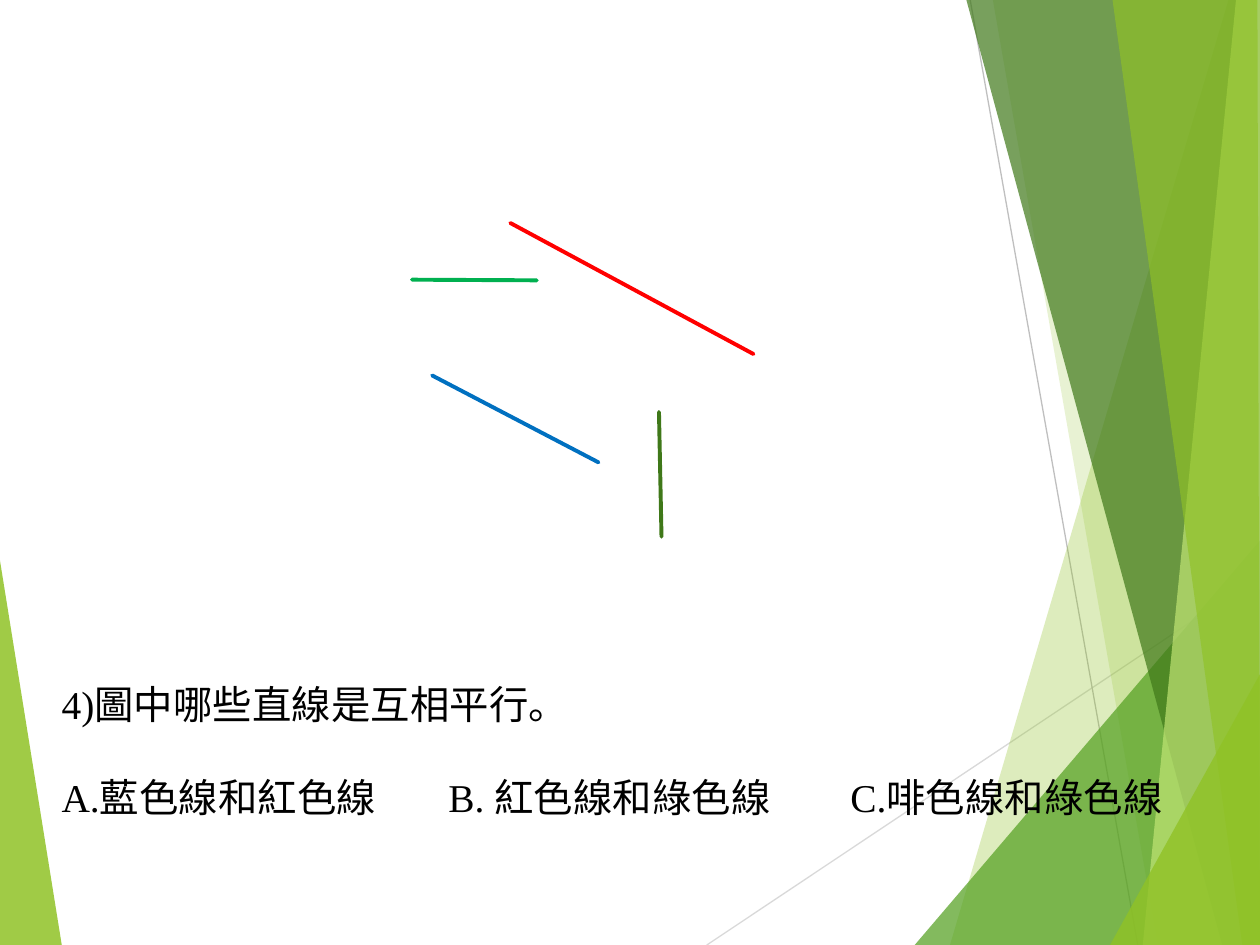
from lxml import etree
from pptx import Presentation
from pptx.dml.color import RGBColor
from pptx.enum.shapes import MSO_CONNECTOR
from pptx.oxml.ns import qn
from pptx.util import Inches, Pt

STRAIGHT = MSO_CONNECTOR.STRAIGHT
COLS, ROWS = 100, 75
CELL = Inches(0.1)
FONT = "Times New Roman"
COLORS = {
    "lime": "90C226", "green": "54A021", "forest": "3F7819", "pale": "C0E474",
    "light gray": "D9D9D9", "gray": "BFBFBF", "black": "000000",
    "red": "FF0000", "blue": "0070C0", "emerald": "00B050",
}

# Points are (column, row); each facet is colour, opacity in percent, corners.
LEFT_FACET = ("lime", 85, [(0, 44.5), (4.9, ROWS), (0, ROWS)])
RIGHT_FACETS = [
    ("lime", 30, [(97.5, 0), (75.4, ROWS), (COLS, ROWS), (COLS, 0)]),
    ("lime", 20, [(78.8, 0), (91.9, ROWS), (COLS, ROWS), (COLS, 0)]),
    ("green", 72, [(72.6, ROWS), (COLS, 42.9), (COLS, ROWS)]),
    ("forest", 70, [(76.7, 0), (97, ROWS), (COLS, ROWS), (COLS, 0)]),
    ("pale", 70, [(98.1, 0), (90.7, ROWS), (COLS, ROWS), (COLS, 0)]),
    ("lime", 65, [(88.3, 0), (98.6, ROWS), (COLS, ROWS), (99.8, 0)]),
    ("lime", 80, [(88.1, ROWS), (COLS, 53.5), (COLS, ROWS)]),
]
THIN_LINES = [
    ("light gray", (56.1, ROWS), (COLS, 45.7)),
    ("gray", (77, 0), (90.3, ROWS)),
]
FIGURE_LINES = [
    ("red", (7.8, 0), (27.1, 10.4)),
    ("blue", (1.6, 12.1), (14.8, 19)),
    ("emerald", (0, 4.5), (9.9, 4.55)),
    ("forest", (19.6, 15), (19.8, 24.9)),
]
QUESTION = "4)圖中哪些直線是互相平行。"
CHOICES = ["A.藍色線和紅色線", "B. 紅色線和綠色線", "C.啡色線和綠色線"]
CHOICE_TABS = [30.7, 62.6]


def rgb(name):
    return RGBColor.from_string(COLORS[name])


def cells(n):
    return round(n * CELL)


def place(box, point):
    """Turn a point of the box's grid into a position on the slide."""
    return cells(box[0] + point[0]), cells(box[1] + point[1])


def add_line(slide, box, color, start, end, width):
    c = slide.shapes.add_connector(STRAIGHT, *place(box, start), *place(box, end))
    c.line.color.rgb = rgb(color)
    c.line.width = Pt(width)
    c.line._get_or_add_ln().set("cap", "rnd")
    etree.SubElement(c._element.spPr, qn("a:effectLst"))


def add_facet(slide, box, color, opacity, corners):
    first, *rest = [place(box, corner) for corner in corners]
    builder = slide.shapes.build_freeform(*first, scale=1.0)
    builder.add_line_segments(rest, close=True)
    sp = builder.convert_to_shape()
    sp.shadow.inherit = False
    sp.line.fill.background()
    sp.fill.solid()
    sp.fill.fore_color.rgb = rgb(color)
    clr = sp._element.spPr.find(qn("a:solidFill")).find(qn("a:srgbClr"))
    etree.SubElement(clr, qn("a:alpha"), val=str(opacity * 1000))


def add_backdrop(slide, box):
    add_facet(slide, box, *LEFT_FACET)
    for color, start, end in THIN_LINES:
        add_line(slide, box, color, start, end, 0.75)
    for facet in RIGHT_FACETS:
        add_facet(slide, box, *facet)


def add_figure(slide, box):
    for color, start, end in FIGURE_LINES:
        add_line(slide, box, color, start, end, 2.25)


def add_question(slide, box):
    tf = slide.shapes.add_textbox(*map(cells, box)).text_frame
    tf.word_wrap = True
    tf.text = QUESTION
    p = tf.add_paragraph()
    p.text = "\t".join(CHOICES)
    p.space_before = Pt(26)
    tabs = etree.SubElement(p._p.get_or_add_pPr(), qn("a:tabLst"))
    for tab in CHOICE_TABS:
        etree.SubElement(tabs, qn("a:tab"), pos=str(cells(tab)), algn="l")
    for p in tf.paragraphs:
        p.font.name = FONT
        p.font.size = Pt(22.5)
        p.font.color.rgb = rgb("black")


def main():
    prs = Presentation()
    prs.slide_width, prs.slide_height = cells(COLS), cells(ROWS)
    slide = prs.slides.add_slide(prs.slide_layouts[6])
    add_backdrop(slide, (0, 0, COLS, ROWS))
    add_figure(slide, (32.7, 17.7, 27.1, 24.9))
    add_question(slide, (3.9, 53.5, 96.1, 12.4))
    prs.save("out.pptx")


if __name__ == "__main__":
    main()
